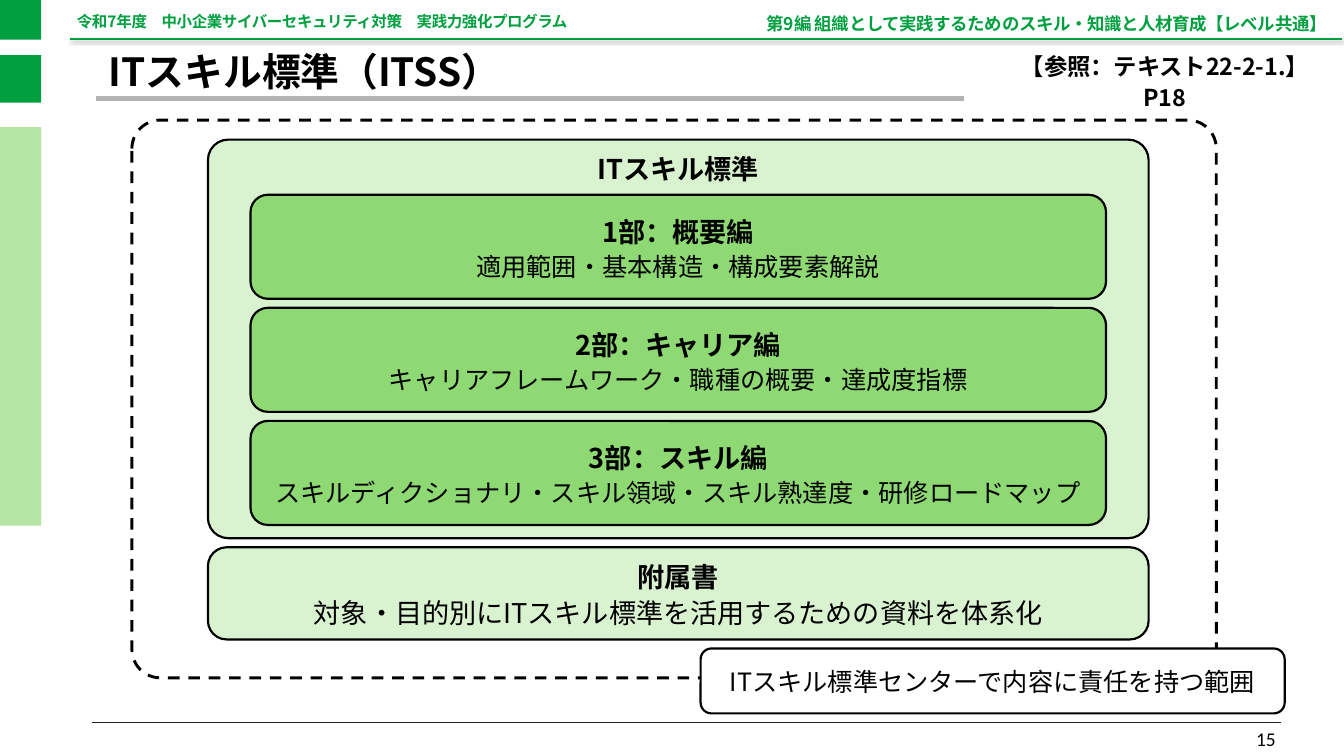
import pptx
import pptx.util
import pptx.dml.color
import pptx.enum.dml
import pptx.enum.shapes
import pptx.enum.text
import pptx.oxml
import pptx.oxml.ns

PX = 9144  # EMU per px, 100 px to the inch
FONT = "Noto Sans CJK JP"
GREEN, PALE, MID, BLACK = "009F40", "D9F2D0", "8ED973", "000000"
SHAPE = pptx.enum.shapes.MSO_SHAPE
ALIGN = pptx.enum.text.PP_ALIGN
ANCHOR = pptx.enum.text.MSO_ANCHOR
Pt = pptx.util.Pt
TIGHT = {"margin_left": 0, "margin_top": PX, "margin_right": 0, "margin_bottom": 0}
HEADING = {"size": 28, "bold": True}
SHADOW = ('<a:outerShdw blurRad="50800" dist="38100" dir="2700000"><a:srgbClr val="000000">'
          '<a:alpha val="40000"/></a:srgbClr></a:outerShdw>')


def color(value):
    return pptx.dml.color.RGBColor.from_string(value)


def box(*lengths):
    return [n * PX for n in lengths]


def apply(obj, values):
    for name, value in values.items():
        setattr(obj, name, value)


def set_text(sp, lines, para=None, frame=None):
    """Each line is (text, format), format holding size, bold, color, font, spc."""
    tf = sp.text_frame
    apply(tf, {"word_wrap": True, "auto_size": pptx.enum.text.MSO_AUTO_SIZE.NONE,
               "vertical_anchor": ANCHOR.TOP, **(frame or {})})
    for i, (text, fmt) in enumerate(lines):
        p = tf.paragraphs[0] if i == 0 else tf.add_paragraph()
        apply(p, {"alignment": ALIGN.CENTER, "line_spacing": 1.1, **(para or {})})
        r = p.add_run()
        r.text = text
        font = fmt.get("font", FONT)
        apply(r.font, {"name": font, "size": Pt(fmt["size"]), "bold": fmt.get("bold", False)})
        r.font.color.rgb = color(fmt.get("color", BLACK))
        rPr = r.font._element
        east = pptx.oxml.parse_xml(f'<a:ea {pptx.oxml.ns.nsdecls("a")} typeface="{font}"/>')
        rPr.find(pptx.oxml.ns.qn("a:latin")).addnext(east)
        if "spc" in fmt:
            rPr.set("spc", str(fmt["spc"]))


def add_text(slide, at, lines, para=None, frame=None):
    set_text(slide.shapes.add_textbox(*box(*at)), lines, para, frame)


def add_rule(slide, x1, x2, y, line, width, effect=""):
    sp = slide.shapes.add_connector(pptx.enum.shapes.MSO_CONNECTOR.STRAIGHT, *box(x1, y, x2, y))
    sp.line.color.rgb = color(line)
    sp.line.width = Pt(width)
    sp._element.spPr.append(pptx.oxml.parse_xml(
        f'<a:effectLst {pptx.oxml.ns.nsdecls("a")}>{effect}</a:effectLst>'))


def add_band(slide, y, height, fill):
    sp = slide.shapes.add_shape(SHAPE.RECTANGLE, *box(0, y, 59, height))
    sp.shadow.inherit = False
    sp.fill.solid()
    sp.fill.fore_color.rgb = color(fill)
    sp.line.fill.background()


def add_panel(slide, at, fill=None, lines=(), corner=0.1667, width=2.25,
              anchor=ANCHOR.MIDDLE, spacing=1.1):
    sp = slide.shapes.add_shape(SHAPE.ROUNDED_RECTANGLE, *box(*at))
    sp.shadow.inherit = False
    sp.adjustments[0] = corner
    if fill:
        sp.fill.solid()
        sp.fill.fore_color.rgb = color(fill)
    else:
        sp.fill.background()
    sp.line.color.rgb = color(BLACK)
    sp.line.width = Pt(width)
    set_text(sp, lines, {"line_spacing": spacing}, {"vertical_anchor": anchor})
    return sp


def main():
    prs = pptx.Presentation()
    prs.slide_width, prs.slide_height = box(1926, 1083)
    slide = prs.slides.add_slide(prs.slide_layouts[5])

    # Rules and side bands
    add_rule(slide, 100, 1923, 56, GREEN, 2, SHADOW)
    add_rule(slide, 132, 1836, 1035, "222222", 1)
    add_rule(slide, 138, 1381, 141, "B2B3B5", 6)
    for y, height, fill in [(0, 57, GREEN), (79, 68, GREEN), (182, 571, "B4E5A2")]:
        add_band(slide, y, height, fill)

    # Header, page number and reference
    header = {"bold": True, "color": GREEN, "spc": -40}
    add_text(slide, (110, 22, 1748, 22),
             [("令和7年度　中小企業サイバーセキュリティ対策　実践力強化プログラム", {**header, "size": 16})],
             {"alignment": ALIGN.LEFT, "line_spacing": Pt(15)}, TIGHT)
    add_text(slide, (862, 20, 1039, 29),
             [("第9編 組織として実践するためのスキル・知識と人材育成【レベル共通】", {**header, "size": 18})],
             {"alignment": ALIGN.RIGHT, "line_spacing": 0.9},
             {**TIGHT, "vertical_anchor": ANCHOR.MIDDLE})
    add_text(slide, (1405, 1022, 433, 58), [("15", {"size": 20, "font": "Calibri"})],
             {"alignment": ALIGN.RIGHT, "line_spacing": 1.0},
             {"vertical_anchor": ANCHOR.BOTTOM})
    reference = {"size": 24, "bold": True}
    add_text(slide, (1433, 66, 473, 93),
             [("【参照：テキスト22-2-1.】", reference), ("P18", reference)])

    # Title
    title = slide.shapes.title
    apply(title, dict(zip(("left", "top", "width", "height"), box(146, 76, 1317, 61))))
    set_text(title, [("ITスキル標準（ITSS）", {"size": 40, "bold": True})],
             {"alignment": ALIGN.LEFT, "line_spacing": 0.9, "space_before": Pt(10)},
             {"vertical_anchor": ANCHOR.MIDDLE})

    # Skill standard and its three parts
    add_panel(slide, (298, 200, 1348, 571), PALE, [("ITスキル標準", HEADING)], 0.051,
              anchor=ANCHOR.TOP)
    parts = [("1部：概要編", "適用範囲・基本構造・構成要素解説"),
             ("2部：キャリア編", "キャリアフレームワーク・職種の概要・達成度指標"),
             ("3部：スキル編", "スキルディクショナリ・スキル領域・スキル熟達度・研修ロードマップ")]
    for i, (name, detail) in enumerate(parts):
        add_panel(slide, (359, 279 + 162 * i, 1226, 149), MID,
                  [(name, HEADING), (detail, {"size": 26})])

    # Appendix
    add_panel(slide, (298, 784, 1348, 132), PALE,
              [("附属書", HEADING),
               ("対象・目的別にITスキル標準を活用するための資料を体系化", {"size": 28})], 0.203)

    # Scope of responsibility
    scope = add_panel(slide, (189, 172, 1554, 799), corner=0.051, width=3)
    scope.line.dash_style = pptx.enum.dml.MSO_LINE.DASH
    add_panel(slide, (1004, 929, 837, 93), "FFFFFF",
              [("ITスキル標準センターで内容に責任を持つ範囲", {"size": 26})], spacing=1.0)

    prs.save("out.pptx")


if __name__ == "__main__":
    main()
